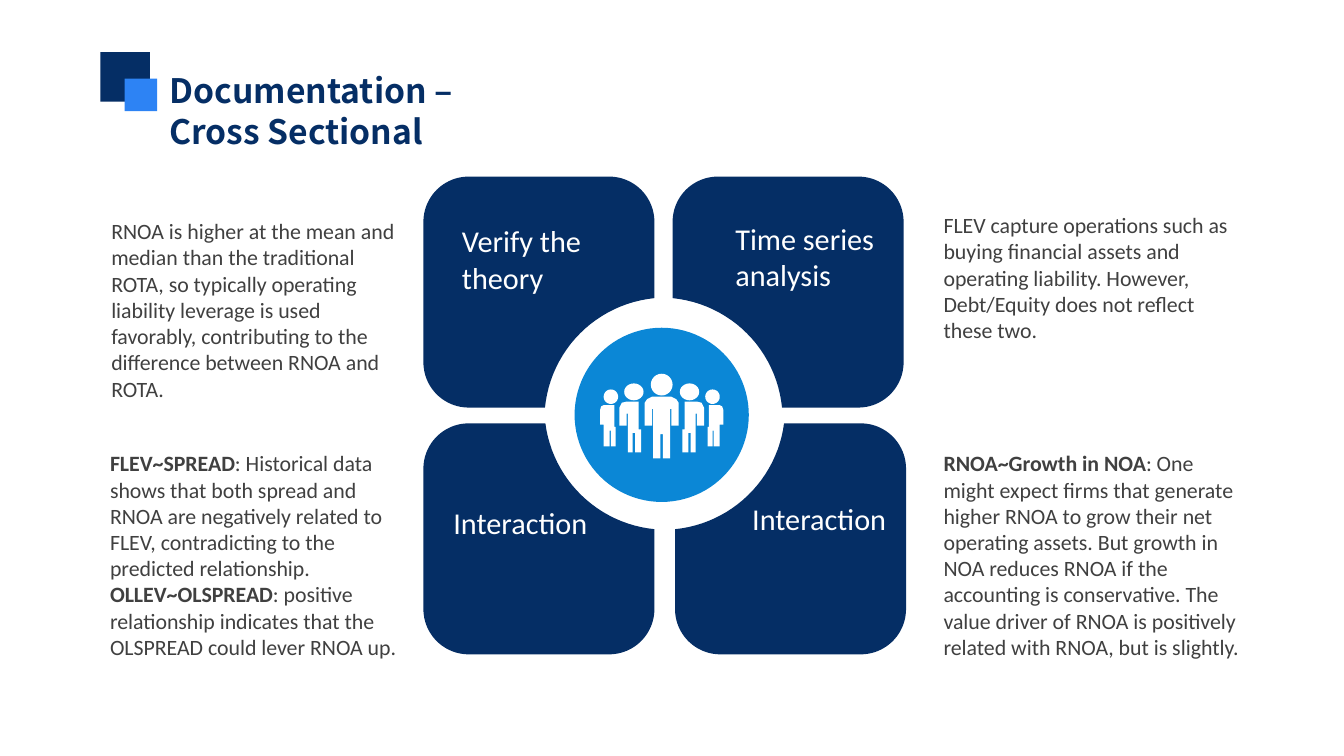
from math import asin, acos, cos, sin, pi
from pptx import Presentation
from pptx.dml.color import RGBColor
from pptx.enum.shapes import MSO_SHAPE as Kind
from pptx.enum.text import MSO_ANCHOR as Anchor, PP_ALIGN as Align
from pptx.util import Inches, Pt

NAVY, BLUE, SKY, WHITE, GREY = "052E65", "2D83F4", "0B87D6", "FFFFFF", "404040"
SIDE, CURVE, BITE = 1.91, 0.375, 1.01
MID = 5.47

HEAD = {"name": "Noto Sans CJK SC", "size": Pt(20), "bold": True}
LABEL = {"name": "Calibri", "size": Pt(18), "bold": False}
BODY = {"name": "Calibri", "size": Pt(13), "bold": False}
WIDE = (0.1, 0.05)
SLIM = (0.08, 0.04)

PANELS = [
    (5.41, 3.37, -1, -1, 0.1),
    (5.56, 3.37, 1, -1, 0.1),
    (5.41, 3.5, -1, 1, 0.13),
    (5.58, 3.5, 1, 1, 0.13),
]
LABELS = [
    ((3.72, 1.79, 1.19, 0.71), "Verify the theory"),
    ((5.98, 1.77, 1.44, 0.71), "Time series analysis"),
    ((3.65, 4.12, 1.87, 0.4), "Interaction"),
    ((6.12, 4.09, 1.44, 0.4), "Interaction"),
]
NOTES = [
    ((7.72, 1.71, 2.64, 1.18), [
        ("", "FLEV capture operations such as buying financial assets and "
             "operating liability. However, Debt/Equity does not reflect these two.")]),
    ((7.72, 3.68, 2.64, 1.84), [
        ("RNOA~Growth in NOA",
         ": One might expect firms that generate higher RNOA to grow their net "
         "operating assets. But growth in NOA reduces RNOA if the accounting is "
         "conservative. The value driver of RNOA is positively related with RNOA, "
         "but is slightly.")]),
    ((0.84, 1.76, 2.6, 1.62), [
        ("", "RNOA is higher at the mean and median than the traditional ROTA, so "
             "typically operating liability leverage is used favorably, contributing "
             "to the difference between RNOA and ROTA.")]),
    ((0.83, 3.68, 2.56, 1.84), [
        ("FLEV~SPREAD",
         ": Historical data shows that both spread and RNOA are negatively related "
         "to FLEV, contradicting to the predicted relationship."),
        ("OLLEV~OLSPREAD",
         ": positive relationship indicates that the OLSPREAD could lever RNOA up.")]),
]

HALF = [(0.01, 3.59), (0.01, 3.79), (0.07, 3.79), (0.07, 3.38), (0.08, 3.38),
        (0.08, 3.52), (0.14, 3.52), (0.14, 3.33), (0.12, 3.3), (0.08, 3.28)]
FRONT = HALF + [(-x, y) for x, y in reversed(HALF)]
NEAR = [(-0.06, 3.55), (-0.06, 3.74), (-0.01, 3.74), (-0.01, 3.58), (0.01, 3.58),
        (0.01, 3.74), (0.05, 3.74), (0.05, 3.42), (0.06, 3.42), (0.06, 3.52),
        (0.12, 3.52), (0.12, 3.37), (0.1, 3.33), (0.06, 3.32), (-0.04, 3.32),
        (-0.04, 3.55)]
FAR = [(-0.04, 3.53), (-0.04, 3.69), (0, 3.69), (0, 3.56), (0.01, 3.56),
       (0.01, 3.69), (0.06, 3.69), (0.06, 3.51), (0.09, 3.51), (0.09, 3.39),
       (0.08, 3.36), (0.06, 3.35), (-0.03, 3.35), (-0.03, 3.53)]
CROWD = [
    (0, 1, FRONT, 3.18, 0.09, 0.09),
    (0.23, -1, NEAR, 3.24, 0.08, 0.07),
    (0.23, 1, NEAR, 3.24, 0.08, 0.07),
    (0.42, -1, FAR, 3.28, 0.06, 0.06),
    (0.42, 1, FAR, 3.28, 0.06, 0.06),
]


def color(code):
    return RGBColor.from_string(code)


def place(item, box):
    for name, size in zip(("left", "top", "width", "height"), box):
        setattr(item, name, Inches(size))


def paint(item, code):
    item.shadow.inherit = False
    item.fill.solid()
    item.fill.fore_color.rgb = color(code)
    item.line.fill.background()


def shape(slide, kind, box, code):
    item = slide.shapes.add_shape(kind, *map(Inches, box))
    paint(item, code)


def outline(slide, loops, code):
    loops = [[(Inches(x), Inches(y)) for x, y in loop] for loop in loops]
    pen = slide.shapes.build_freeform(*loops[0][0])
    for i, dots in enumerate(loops):
        if i:
            pen.move_to(*dots[0])
        pen.add_line_segments(dots[1:], close=True)
    paint(pen.convert_to_shape(), code)


def arc(x, y, wide, high, start, end, steps=24):
    turns = [start + (end - start) * i / steps for i in range(steps + 1)]
    return [(x + wide * cos(t), y + high * sin(t)) for t in turns]


def panel(slide, x, y, across, down, inset):
    far = SIDE - CURVE
    points = arc(-0.1, -inset, BITE, BITE, asin(inset / BITE), acos(0.1 / BITE))
    points += arc(CURVE, far, CURVE, CURVE, pi, pi / 2)
    points += arc(far, far, CURVE, CURVE, pi / 2, 0)
    points += arc(far, CURVE, CURVE, CURVE, 0, -pi / 2)
    outline(slide, [[(x + across * u, y + down * v) for u, v in points]], NAVY)


def person(shift, way, body, y, wide, high):
    x = MID + way * shift
    return [arc(x, y, wide, high, 0, 2 * pi), [(x + way * u, v) for u, v in body]]


def style(font, looks, code):
    for name, value in looks.items():
        setattr(font, name, value)
    font.color.rgb = color(code)


def setup(frame, inset):
    side, edge = map(Inches, inset)
    looks = {"word_wrap": True, "vertical_anchor": Anchor.TOP,
             "margin_left": side, "margin_right": side,
             "margin_top": edge, "margin_bottom": edge}
    for name, value in looks.items():
        setattr(frame, name, value)


def text(slide, box, lines, looks, code, inset):
    frame = slide.shapes.add_textbox(*map(Inches, box)).text_frame
    setup(frame, inset)
    for i, (lead, rest) in enumerate(lines):
        para = frame.add_paragraph() if i else frame.paragraphs[0]
        for words, bold in ((lead, True), (rest, False)):
            if words:
                run = para.add_run()
                run.text = words
                style(run.font, {**looks, "bold": bold}, code)


def title(slide, words):
    item = slide.shapes.title
    place(item, (1.3, 0.53, 2.83, 0.77))
    setup(item.text_frame, WIDE)
    item.text_frame.text = words
    para = item.text_frame.paragraphs[0]
    para.alignment = Align.LEFT
    para.line_spacing = Pt(24)
    style(para.runs[0].font, HEAD, NAVY)


def main():
    deck = Presentation()
    deck.slide_width, deck.slide_height = Inches(11.11), Inches(6.25)
    slide = deck.slides.add_slide(deck.slide_layouts[5])
    title(slide, "Documentation – Cross Sectional")
    shape(slide, Kind.RECTANGLE, (0.83, 0.43, 0.41, 0.41), NAVY)
    shape(slide, Kind.RECTANGLE, (1.03, 0.65, 0.27, 0.27), BLUE)
    for spot in PANELS:
        panel(slide, *spot)
    for box, words in LABELS:
        text(slide, box, [("", words)], LABEL, WHITE, WIDE)
    for box, lines in NOTES:
        text(slide, box, lines, BODY, GREY, SLIM)
    shape(slide, Kind.OVAL, (4.75, 2.71, 1.44, 1.44), SKY)
    outline(slide, [loop for member in CROWD for loop in person(*member)], WHITE)
    deck.save("out.pptx")


if __name__ == "__main__":
    main()
